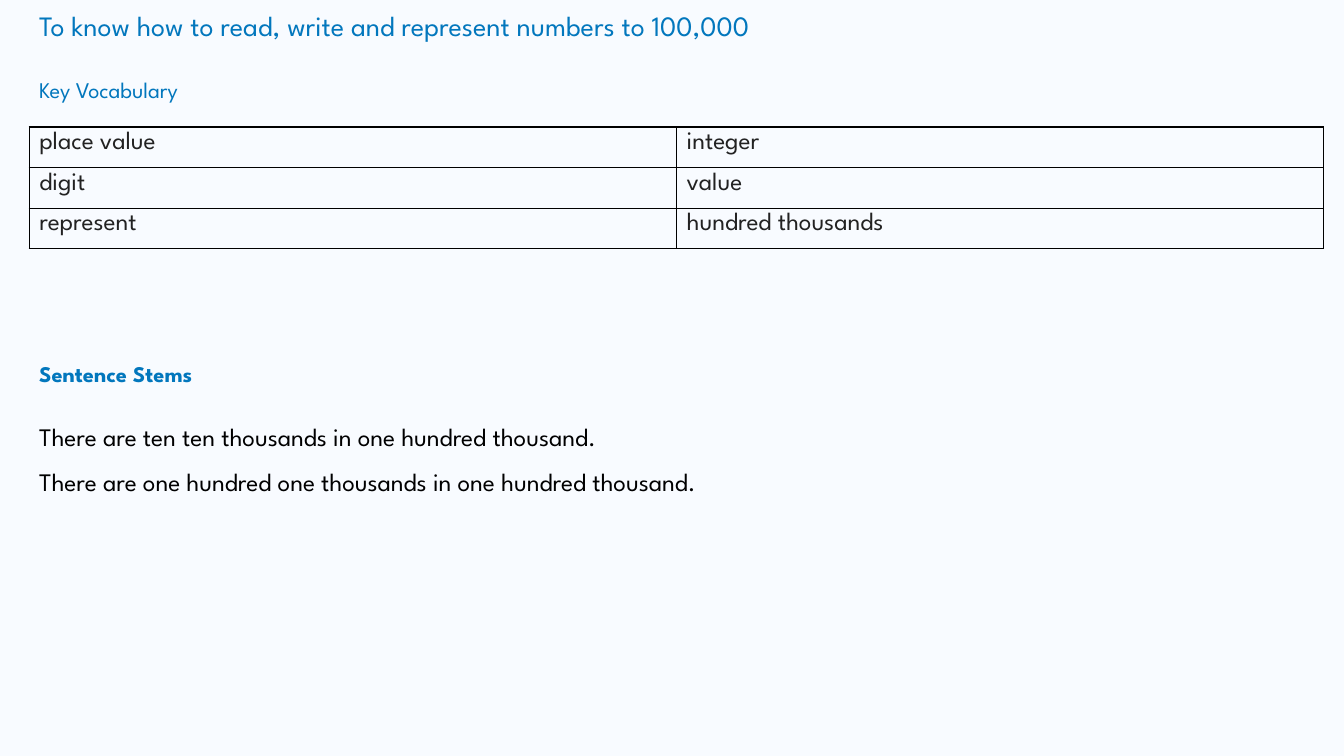
from lxml.etree import SubElement
from pptx import Presentation
from pptx.dml.color import RGBColor
from pptx.oxml.ns import qn
from pptx.util import Inches, Pt

FONT = "League Spartan"
BACKGROUND, BLUE, INK, BLACK = "F8FBFF", "0277BD", "222222", "000000"
LEFT, FULL_WIDTH, HEADING_WIDTH = 0.29, 12.84, 2.97

OBJECTIVE = "To know how to read, write and represent numbers to 100,000"
VOCABULARY_HEADING = "Key Vocabulary"
VOCABULARY = [
    ("place value", "integer"),
    ("digit", "value"),
    ("represent", "hundred thousands"),
]
STEMS_HEADING = "Sentence Stems"
STEMS = [
    "There are ten ten thousands in one hundred thousand.",
    "There are one hundred one thousands in one hundred thousand.",
]


def rgb(hex_color):
    return RGBColor.from_string(hex_color)


def style(paragraph, size, color, bold=False):
    font = paragraph.font
    font.name, font.size, font.bold = FONT, Pt(size), bold
    font.color.rgb = rgb(color)


def add_text(slide, lines, top, width, height, size, color, bold=False, spacing=None):
    box = slide.shapes.add_textbox(Inches(LEFT), Inches(top), Inches(width), Inches(height))
    frame = box.text_frame
    frame.word_wrap = True
    frame.text = "\n".join(lines)
    for paragraph in frame.paragraphs:
        paragraph.line_spacing = spacing
        style(paragraph, size, color, bold)


def add_borders(cell):
    """Draw a 1 pt black line on all four sides, ahead of the cell's fill."""
    properties = cell._tc.get_or_add_tcPr()
    for position, side in enumerate(("a:lnL", "a:lnR", "a:lnT", "a:lnB")):
        line = SubElement(properties, qn(side), w=str(Pt(1)))
        fill = SubElement(line, qn("a:solidFill"))
        SubElement(fill, qn("a:srgbClr"), val=BLACK)
        properties.insert(position, line)


def add_vocabulary(slide, top, height):
    table = slide.shapes.add_table(
        len(VOCABULARY), len(VOCABULARY[0]),
        Inches(LEFT), Inches(top), Inches(FULL_WIDTH), Inches(height),
    ).table
    table.first_row = table.horz_banding = False
    for row, words in enumerate(VOCABULARY):
        for column, word in enumerate(words):
            cell = table.cell(row, column)
            cell.text = word
            cell.fill.background()
            style(cell.text_frame.paragraphs[0], 18, INK)
            add_borders(cell)


def main():
    presentation = Presentation()
    presentation.slide_width, presentation.slide_height = Inches(13.33), Inches(7.5)
    slide = presentation.slides.add_slide(presentation.slide_layouts[6])
    slide.background.fill.solid()
    slide.background.fill.fore_color.rgb = rgb(BACKGROUND)

    add_text(slide, [OBJECTIVE], 0.04, 12.34, 0.44, 20, BLUE)
    add_text(slide, [VOCABULARY_HEADING], 0.71, HEADING_WIDTH, 0.46, 16, BLUE)
    add_vocabulary(slide, 1.26, 1.21)
    add_text(slide, [STEMS_HEADING], 3.52, HEADING_WIDTH, 0.46, 16, BLUE, bold=True)
    add_text(slide, STEMS, 3.98, FULL_WIDTH, 0.95, 18, BLACK, spacing=1.5)
    presentation.save("out.pptx")


if __name__ == "__main__":
    main()
